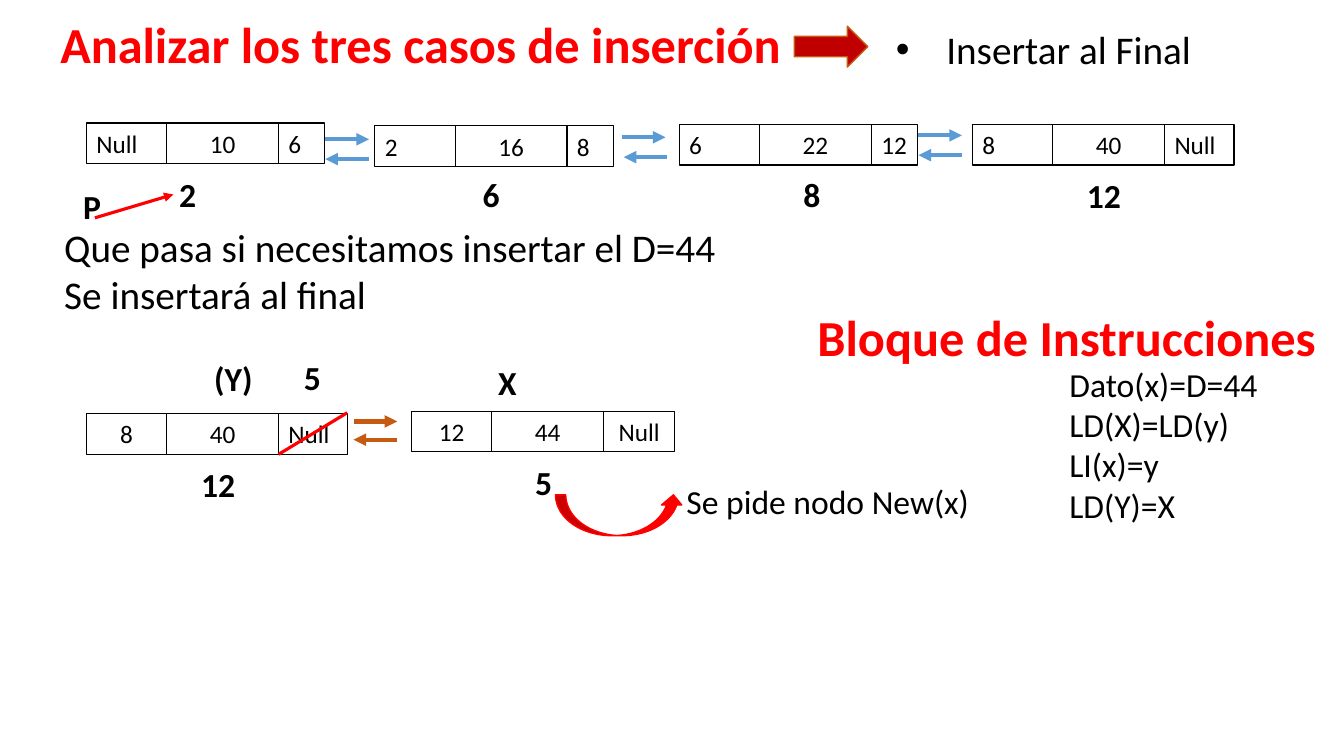
"""Build the slide on inserting a node at the end of a doubly linked list."""
from lxml.etree import SubElement
from pptx import Presentation
from pptx.dml.color import RGBColor
from pptx.enum.shapes import MSO_CONNECTOR, MSO_SHAPE
from pptx.enum.text import MSO_ANCHOR, PP_ALIGN
from pptx.oxml.ns import qn
from pptx.util import Cm, Pt

BLACK = RGBColor(0x00, 0x00, 0x00)
RED = RGBColor(0xFF, 0x00, 0x00)
DARK_RED = RGBColor(0xC0, 0x00, 0x00)
BLUE = RGBColor(0x5B, 0x9B, 0xD5)
ORANGE = RGBColor(0xC5, 0x5A, 0x11)
LEFT, CENTER = PP_ALIGN.LEFT, PP_ALIGN.CENTER


def write(shape, text, size, color=BLACK, bold=False, align=LEFT):
    """Put formatted text in a shape."""
    frame = shape.text_frame
    frame.word_wrap = True
    frame.text = text
    for paragraph in frame.paragraphs:
        paragraph.alignment = align
        for run in paragraph.runs:
            run.font.name = "Calibri"
            run.font.size = Pt(size)
            run.font.bold = bold
            run.font.color.rgb = color


def add_line(start, end, color, width, arrow=True):
    """Draw a straight line, with an arrowhead at its end if wanted."""
    points = [Cm(value) for value in (*start, *end)]
    connector = slide.shapes.add_connector(MSO_CONNECTOR.STRAIGHT, *points)
    connector.line.color.rgb = color
    connector.line.width = Pt(width)
    if arrow:
        SubElement(connector.line._get_or_add_ln(), qn("a:tailEnd"), type="triangle")
    SubElement(connector._element.spPr, qn("a:effectLst"))


presentation = Presentation()
presentation.slide_width = Cm(33.87)
presentation.slide_height = Cm(19.05)
slide = presentation.slides.add_slide(presentation.slide_layouts[6])

CELL_HEIGHT = 1.03
nodes = [
    (2.18, 3.1, 1.17, ("Null", "10", "6"), LEFT, LEFT),
    (9.45, 3.17, 1.17, ("2", "16", "8"), LEFT, LEFT),
    (17.12, 3.13, 1.17, ("6", "22", "12"), LEFT, LEFT),
    (24.51, 3.13, 1.75, ("8", "40", "Null"), LEFT, LEFT),
    (2.18, 10.42, 1.75, ("8", "40", "Null"), CENTER, LEFT),
    (10.37, 10.36, 1.8, ("12", "44", "Null"), CENTER, CENTER),
]
for left, top, last_width, values, first_align, last_align in nodes:
    widths = (2.02, 2.82, last_width)
    aligns = (first_align, CENTER, last_align)
    for value, width, align in zip(values, widths, aligns):
        cell = slide.shapes.add_shape(
            MSO_SHAPE.RECTANGLE, Cm(left), Cm(top), Cm(width), Cm(CELL_HEIGHT))
        cell.shadow.inherit = False
        cell.fill.background()
        cell.line.color.rgb = BLACK
        cell.line.width = Pt(0.75)
        cell.text_frame.vertical_anchor = MSO_ANCHOR.MIDDLE
        write(cell, value, 18, align=align)
        left += width

ARROW_LENGTH = 1.1
links = [
    (8.2, 8.2, 3.51, BLUE),
    (15.67, 15.72, 3.46, BLUE),
    (23.14, 23.15, 3.41, BLUE),
    (8.91, 8.91, 10.62, ORANGE),
]
for next_left, previous_left, top, color in links:
    bottom = top + (0.46 if color == ORANGE else 0.5)
    add_line((next_left, top), (next_left + ARROW_LENGTH, top), color, 3)
    add_line((previous_left + ARROW_LENGTH, bottom), (previous_left, bottom), color, 3)

node_labels = [
    ("2", 3.78, 4.27), ("6", 11.43, 4.27), ("8", 19.51, 4.27), ("12", 26.87, 4.29),
    ("P", 1.37, 4.56), ("(Y)", 4.93, 8.9), ("5", 6.92, 8.87), ("X", 11.84, 9),
    ("12", 4.55, 11.56), ("5", 12.75, 11.52),
]
for text, left, top in node_labels:
    label = slide.shapes.add_textbox(Cm(left), Cm(top), Cm(1.9), Cm(1.28))
    write(label, text, 24, bold=True, align=CENTER)

passages = [
    ("Analizar los tres casos de inserción", 1.27, 0.2, 18.95, 1.8, 36, RED, True),
    ("Que pasa si necesitamos insertar el D=44\nSe insertará al final",
     1.37, 5.49, 31.09, 2.64, 28, BLACK, False),
    ("Bloque de Instrucciones", 20.35, 7.6, 13.4, 1.8, 36, RED, True),
    ("Dato(x)=D=44\nLD(X)=LD(y)\nLI(x)=y\nLD(Y)=X",
     26.7, 9.04, 5.56, 4.37, 24, BLACK, False),
    ("Se pide nodo New(x)", 17.05, 11.99, 9.35, 1.28, 24, BLACK, False),
]
for text, left, top, width, height, size, color, bold in passages:
    passage = slide.shapes.add_textbox(Cm(left), Cm(top), Cm(width), Cm(height))
    write(passage, text, size, color, bold)

case = slide.shapes.add_textbox(Cm(22.33), Cm(0.51), Cm(11.18), Cm(1.45))
write(case, "Insertar al Final", 28)
properties = case.text_frame.paragraphs[0]._p.get_or_add_pPr()
properties.set("marL", str(Cm(1.27)))
properties.set("indent", str(-Cm(1.27)))
SubElement(properties, qn("a:buFont"), typeface="Arial")
SubElement(properties, qn("a:buChar"), char="•")

block_arrows = [
    (MSO_SHAPE.RIGHT_ARROW, 20.02, 0.66, 1.85, 1.03, DARK_RED, ORANGE),
    (MSO_SHAPE.CURVED_UP_ARROW, 14, 12.47, 3.23, 1.03, RED, RED),
]
for kind, left, top, width, height, fill, outline in block_arrows:
    arrow = slide.shapes.add_shape(kind, Cm(left), Cm(top), Cm(width), Cm(height))
    arrow.shadow.inherit = False
    arrow.fill.solid()
    arrow.fill.fore_color.rgb = fill
    arrow.line.color.rgb = outline
    arrow.line.width = Pt(1)

add_line((2.39, 5.49), (4.37, 4.9), RED, 2.25)
add_line((7.02, 11.45), (8.75, 10.4), RED, 2.25, arrow=False)

presentation.save("out.pptx")
